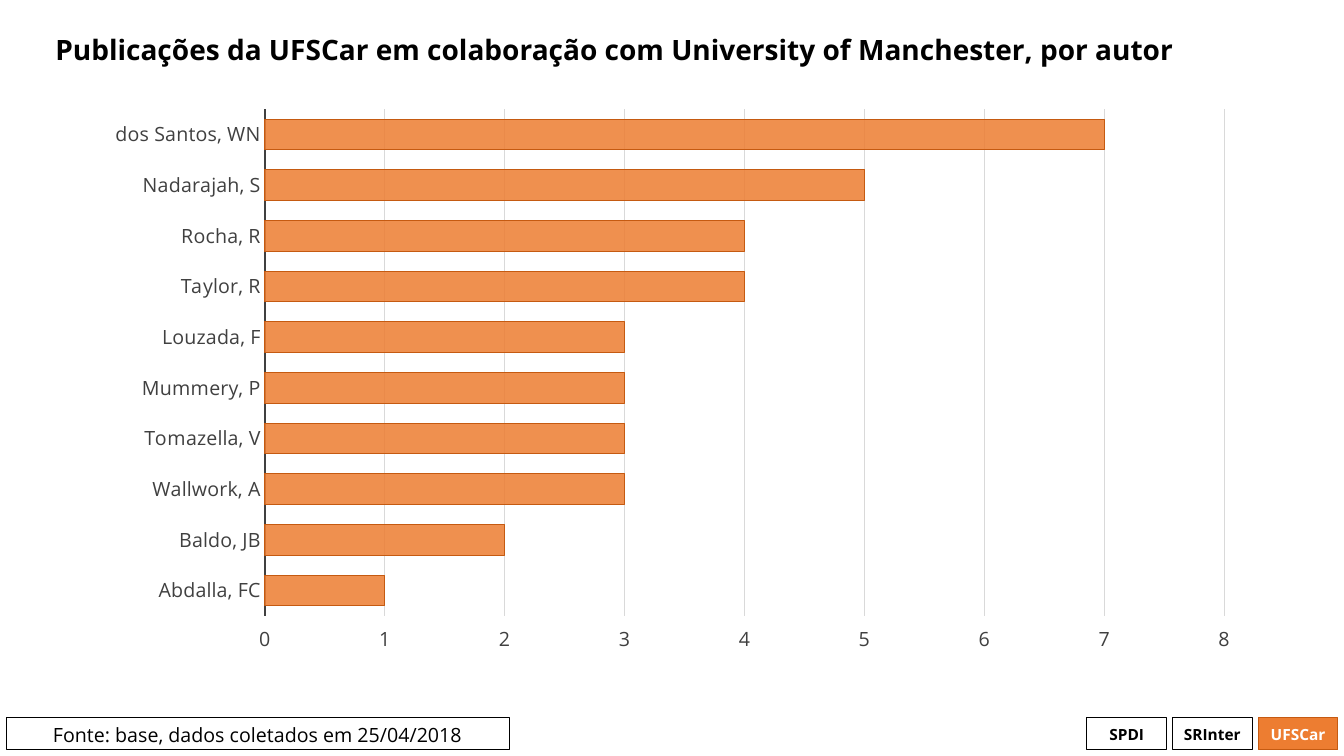
from dataclasses import dataclass
from typing import Optional

from pptx import Presentation
from pptx import oxml
from pptx.chart import data as chart_data
from pptx.dml.color import RGBColor
from pptx.enum import chart as ch, shapes, text
from pptx.util import Inches, Pt

FONT = "Open Sans"
BLACK = RGBColor(0x00, 0x00, 0x00)
WHITE = RGBColor(0xFF, 0xFF, 0xFF)
ORANGE = RGBColor(0xED, 0x7D, 0x31)
DARK_ORANGE = RGBColor(0xC5, 0x5A, 0x11)
AXIS_GREY = RGBColor(0x40, 0x40, 0x40)
GRID_GREY = RGBColor(0xD9, 0xD9, 0xD9)

FOOTER_TOP, FOOTER_HEIGHT = 7.12, 0.32
TAG_LEFT, TAG_WIDTH, TAG_STEP = 10.78, 0.79, 0.85

PUBLICATIONS = {
    "dos Santos, WN": 7,
    "Nadarajah, S": 5,
    "Rocha, R": 4,
    "Taylor, R": 4,
    "Louzada, F": 3,
    "Mummery, P": 3,
    "Tomazella, V": 3,
    "Wallwork, A": 3,
    "Baldo, JB": 2,
    "Abdalla, FC": 1,
}


@dataclass
class FooterBox:
    label: str
    left: float
    width: float = TAG_WIDTH
    size: int = 11
    bold: bool = True
    fill: Optional[RGBColor] = None
    line: RGBColor = BLACK
    color: RGBColor = BLACK
    anchor: text.MSO_ANCHOR = text.MSO_ANCHOR.MIDDLE


FOOTER = [
    FooterBox("SPDI", TAG_LEFT),
    FooterBox("SRInter", TAG_LEFT + TAG_STEP),
    FooterBox("UFSCar", TAG_LEFT + 2 * TAG_STEP,
              fill=ORANGE, line=DARK_ORANGE, color=WHITE),
    FooterBox("Fonte: base, dados coletados em 25/04/2018", 0.06, width=4.99,
              size=14, bold=False, anchor=text.MSO_ANCHOR.TOP),
]


def set_font(font, size: float, color: RGBColor, bold: bool = False) -> None:
    font.name, font.size, font.bold = FONT, Pt(size), bold
    font.color.rgb = color


def add_footer_box(slide, box: FooterBox) -> None:
    shape = slide.shapes.add_shape(
        shapes.MSO_SHAPE.RECTANGLE, Inches(box.left), Inches(FOOTER_TOP),
        Inches(box.width), Inches(FOOTER_HEIGHT))
    shape.shadow.inherit = False
    if box.fill is None:
        shape.fill.background()
    else:
        shape.fill.solid()
        shape.fill.fore_color.rgb = box.fill
    shape.line.color.rgb = box.line
    shape.line.width = Pt(0.75)
    frame = shape.text_frame
    frame.word_wrap = True
    frame.vertical_anchor = box.anchor
    label = frame.paragraphs[0]
    label.text = box.label
    label.alignment = text.PP_ALIGN.CENTER
    set_font(label.font, box.size, box.color, box.bold)


def add_title(slide, wording: str) -> None:
    frame = slide.shapes.add_textbox(
        Inches(0.45), Inches(0.06), Inches(12.41), Inches(0.91)).text_frame
    frame.word_wrap = True
    frame.vertical_anchor = text.MSO_ANCHOR.MIDDLE
    title = frame.paragraphs[0]
    title.text = wording
    title.line_spacing = 0.9
    set_font(title.font, 20, BLACK, bold=True)


def place_plot_area(chart, x: float, y: float, w: float, h: float) -> None:
    plot_area = chart.element.xpath("c:chart/c:plotArea")[0]
    for layout in plot_area.xpath("c:layout"):
        plot_area.remove(layout)
    sides = "".join(f'<c:{tag} val="{value}"/>'
                    for tag, value in zip("xywh", (x, y, w, h)))
    plot_area.insert(0, oxml.parse_xml(
        '<c:layout xmlns:c="http://schemas.openxmlformats.org/drawingml/2006/chart">'
        '<c:manualLayout><c:layoutTarget val="inner"/>'
        '<c:xMode val="edge"/><c:yMode val="edge"/>'
        f'{sides}</c:manualLayout></c:layout>'))


def add_publications_chart(slide) -> None:
    publications = chart_data.CategoryChartData()
    publications.categories = list(PUBLICATIONS)
    publications.add_series("Series 1", list(PUBLICATIONS.values()))
    chart = slide.shapes.add_chart(
        ch.XL_CHART_TYPE.BAR_CLUSTERED, Inches(0.91), Inches(0.97),
        Inches(11.52), Inches(5.63), publications).chart
    chart.has_legend = False
    chart.has_title = False
    set_font(chart.font, 14, BLACK)
    place_plot_area(chart, 0.149, 0.02, 0.826, 0.893)

    # Bars
    plot = chart.plots[0]
    plot.gap_width = 65
    plot.vary_by_categories = False
    bars = plot.series[0].format
    bars.fill.solid()
    bars.fill.fore_color.rgb = ORANGE
    bars.line.color.rgb = DARK_ORANGE
    bars.line.width = Pt(0.75)
    bar_color = chart.element.xpath(".//c:ser/c:spPr/a:solidFill/a:srgbClr")[0]
    bar_color.append(oxml.parse_xml(
        '<a:alpha xmlns:a="http://schemas.openxmlformats.org/drawingml/2006/main"'
        ' val="85000"/>'))

    # Axes: authors read downwards, counts stay at the bottom
    authors, counts = chart.category_axis, chart.value_axis
    for axis in (authors, counts):
        axis.major_tick_mark = axis.minor_tick_mark = ch.XL_TICK_MARK.NONE
        set_font(axis.tick_labels.font, 14, AXIS_GREY)
    authors.reverse_order = True
    authors.has_major_gridlines = False
    authors.format.line.color.rgb = AXIS_GREY
    authors.format.line.width = Pt(1.5)
    counts.tick_label_position = ch.XL_TICK_LABEL_POSITION.HIGH
    counts.minimum_scale, counts.maximum_scale, counts.major_unit = 0, 8, 1
    counts.format.line.fill.background()
    grid = counts.major_gridlines.format.line
    grid.color.rgb = GRID_GREY
    grid.width = Pt(0.75)


def main() -> None:
    deck = Presentation()
    deck.slide_width, deck.slide_height = Inches(13.33), Inches(7.5)
    slide = deck.slides.add_slide(deck.slide_layouts[6])
    for box in FOOTER:
        add_footer_box(slide, box)
    add_title(slide, "Publicações da UFSCar em colaboração com "
                     "University of Manchester, por autor")
    add_publications_chart(slide)
    deck.save("out.pptx")


if __name__ == "__main__":
    main()
